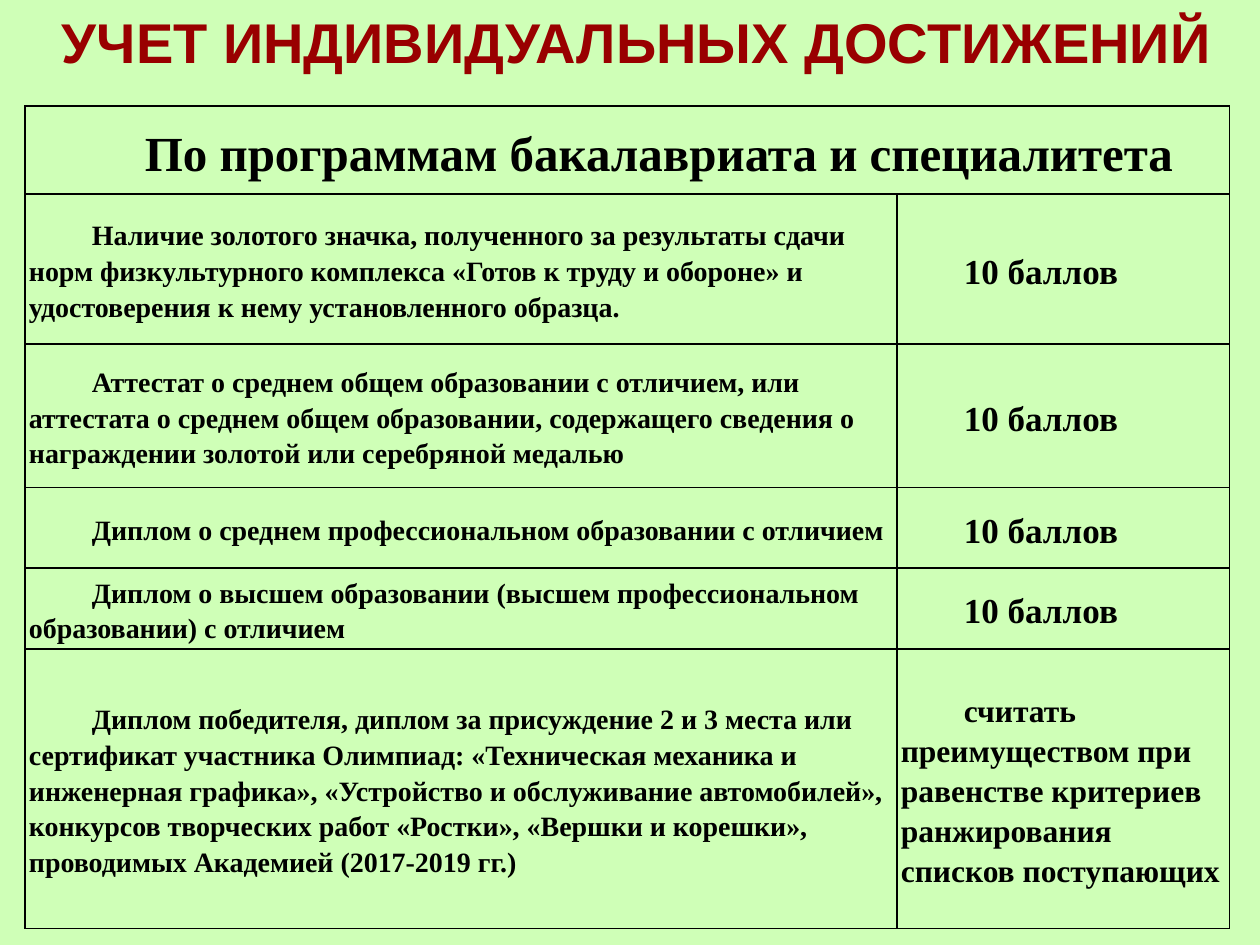
from typing import NamedTuple

from lxml import etree
from pptx import Presentation
from pptx.dml.color import RGBColor
from pptx.enum.text import MSO_ANCHOR, MSO_AUTO_SIZE, PP_ALIGN
from pptx.oxml.ns import qn
from pptx.util import Pt

CENTER, LEFT = PP_ALIGN.CENTER, PP_ALIGN.LEFT
MIDDLE = MSO_ANCHOR.MIDDLE
FIT_SHAPE = MSO_AUTO_SIZE.SHAPE_TO_FIT_TEXT

PALE_GREEN = RGBColor(0xCF, 0xFF, 0xB7)
DARK_RED = RGBColor(0x99, 0x00, 0x00)
BLACK = RGBColor(0x00, 0x00, 0x00)

COLUMN_WIDTHS = (498.24, 190.08)
HEADING_HEIGHT = 50.4
BORDER_SIDES = ("a:lnL", "a:lnR", "a:lnT", "a:lnB")
CELL_FORMAT = {
    "margin_left": Pt(2.16),
    "margin_right": Pt(2.16),
    "margin_top": Pt(0.72),
    "margin_bottom": Pt(0),
    "vertical_anchor": MIDDLE,
}


class Achievement(NamedTuple):
    description: str
    height: float
    award: str = "10 баллов"
    award_size: float = 20


ACHIEVEMENTS = (
    Achievement("Наличие золотого значка, полученного за результаты сдачи норм "
                "физкультурного комплекса «Готов к труду и обороне» и "
                "удостоверения к нему установленного образца.", 85.68),
    Achievement("Аттестат о среднем общем образовании с отличием, или аттестата "
                "о среднем общем образовании, содержащего сведения о "
                "награждении золотой или серебряной медалью", 82.08),
    Achievement("Диплом о среднем профессиональном образовании с отличием", 46.08),
    Achievement("Диплом о высшем образовании (высшем профессиональном "
                "образовании) с отличием", 46.08),
    Achievement("Диплом победителя, диплом за присуждение 2 и 3 места или "
                "сертификат участника Олимпиад: «Техническая механика и "
                "инженерная графика», «Устройство и обслуживание автомобилей», "
                "конкурсов творческих работ «Ростки», «Вершки и корешки», "
                "проводимых Академией (2017-2019 гг.)", 159.84,
                "считать преимуществом при равенстве критериев ранжирования "
                "списков поступающих", 18),
)


def write(paragraph, text: str, size: float, font: str, color: RGBColor, align) -> None:
    paragraph.alignment = align
    run = paragraph.add_run()
    run.text = text
    for name, value in {"size": Pt(size), "name": font, "bold": True}.items():
        setattr(run.font, name, value)
    run.font.color.rgb = color


def frame_cell(cell) -> None:
    """Give the cell thin black borders, no fill and tight margins."""
    for name, value in CELL_FORMAT.items():
        setattr(cell, name, value)
    properties = cell._tc.get_or_add_tcPr()
    for side in BORDER_SIDES:
        line = etree.SubElement(properties, qn(side), w=str(Pt(1)))
        fill = etree.SubElement(line, qn("a:solidFill"))
        etree.SubElement(fill, qn("a:srgbClr"), val=str(BLACK))
    cell.fill.background()


def fill_cell(cell, text: str, size: float, align=LEFT) -> None:
    paragraph = cell.text_frame.paragraphs[0]
    paragraph.line_spacing = 1.15
    properties = paragraph._p.get_or_add_pPr()
    properties.set("marL", "0")
    properties.set("indent", str(Pt(36)))
    write(paragraph, text, size, "Times New Roman", BLACK, align)


def add_title(slide) -> None:
    title = slide.shapes.add_textbox(Pt(25.2), Pt(0.72), Pt(677.52), Pt(46.08))
    frame = title.text_frame
    frame.word_wrap = False
    frame.auto_size = FIT_SHAPE
    write(frame.paragraphs[0], "УЧЕТ ИНДИВИДУАЛЬНЫХ ДОСТИЖЕНИЙ", 32, "Arial",
          DARK_RED, CENTER)


def add_achievements(slide) -> None:
    heights = [HEADING_HEIGHT] + [item.height for item in ACHIEVEMENTS]
    table = slide.shapes.add_table(
        len(heights), len(COLUMN_WIDTHS), Pt(14.4), Pt(60.48),
        Pt(sum(COLUMN_WIDTHS)), Pt(sum(heights))).table
    table.first_row = False
    table.horz_banding = False
    for column, width in zip(table.columns, COLUMN_WIDTHS):
        column.width = Pt(width)
    for row, height in zip(table.rows, heights):
        row.height = Pt(height)
        for cell in row.cells:
            frame_cell(cell)

    heading = table.cell(0, 0)
    heading.merge(table.cell(0, 1))
    fill_cell(heading, "По программам бакалавриата и специалитета", 28, CENTER)
    for index, item in enumerate(ACHIEVEMENTS, start=1):
        fill_cell(table.cell(index, 0), item.description, 16)
        fill_cell(table.cell(index, 1), item.award, item.award_size)


def main() -> None:
    presentation = Presentation()
    presentation.slide_width, presentation.slide_height = Pt(720), Pt(540)
    slide = presentation.slides.add_slide(presentation.slide_layouts[6])
    slide.background.fill.solid()
    slide.background.fill.fore_color.rgb = PALE_GREEN
    add_title(slide)
    add_achievements(slide)
    presentation.save("out.pptx")


if __name__ == "__main__":
    main()
